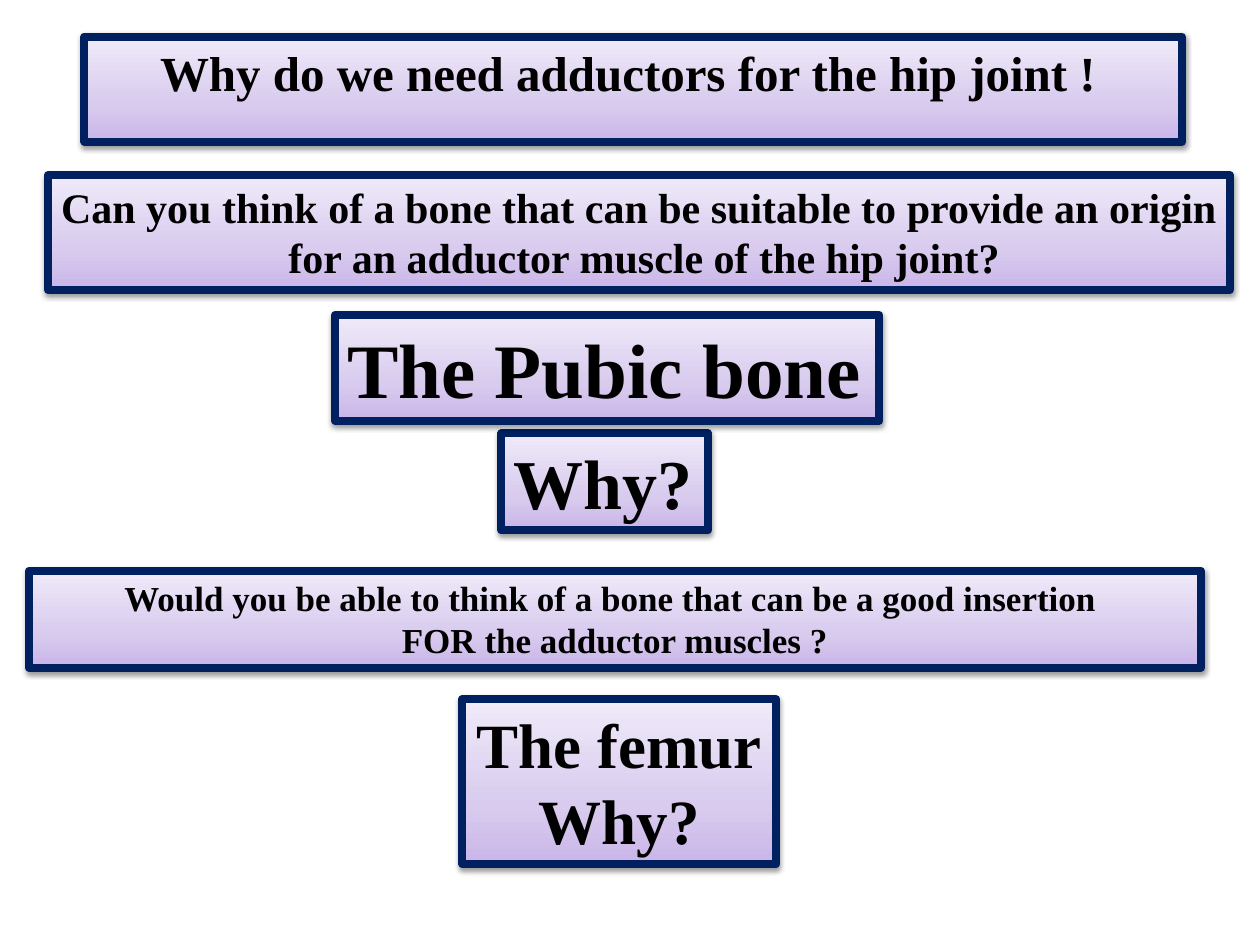
import copy

import pptx
import pptx.dml.color
import pptx.enum.text
import pptx.oxml
import pptx.oxml.ns
import pptx.util

Inches = pptx.util.Inches
Pt = pptx.util.Pt
qn = pptx.oxml.ns.qn
ALIGN = pptx.enum.text.PP_ALIGN

COLORS = {"text": "000000", "border": "002060", "shadow": "000000",
          "dark": "C9B5E8", "middle": "D8CBEE", "light": "F0EAF9"}
GRADIENT = [("dark", 0), ("middle", 0.35), ("light", 1)]
SHADOW = (
    f'<a:effectLst {pptx.oxml.ns.nsdecls("a")}>'
    f'<a:outerShdw blurRad="{Pt(3.1)}" dist="{Pt(1.6)}" dir="5400000" rotWithShape="0">'
    f'<a:srgbClr val="{COLORS["shadow"]}"><a:alpha val="38000"/></a:srgbClr>'
    '</a:outerShdw></a:effectLst>')


def rgb(name):
    return pptx.dml.color.RGBColor.from_string(COLORS[name])


class QuestionSlide:
    """Lavender boxes with a navy border on one slide."""

    font = "Times New Roman"
    border_width = Pt(4.5)

    def __init__(self, prs):
        self.s = prs.slides.add_slide(prs.slide_layouts[5])

    def title(self, text, box, size):
        sp = self.s.shapes.title
        sp.left, sp.top, sp.width, sp.height = [Inches(v) for v in box]
        self.decorate(sp)
        self.set_text(sp, text, size, ALIGN.LEFT, wrap=True)

    def box(self, text, box, size, align=ALIGN.CENTER, wrap=False):
        sp = self.s.shapes.add_textbox(*[Inches(v) for v in box])
        self.decorate(sp)
        self.set_text(sp, text, size, align, wrap)

    def decorate(self, sp):
        # Three-stop gradient, dark at the bottom
        sp.fill.gradient()
        sp.fill.gradient_angle = 90
        stops = sp.element.spPr.find(".//" + qn("a:gsLst"))
        stops.append(copy.deepcopy(stops[-1]))
        for stop, (name, position) in zip(sp.fill.gradient_stops, GRADIENT):
            stop.color.rgb = rgb(name)
            stop.position = position
        # Border and soft shadow
        sp.line.color.rgb = rgb("border")
        sp.line.width = self.border_width
        sp.element.spPr.append(pptx.oxml.parse_xml(SHADOW))

    def set_text(self, sp, text, size, align, wrap):
        tf = sp.text_frame
        tf.text = text
        tf.word_wrap = wrap
        tf.auto_size = pptx.enum.text.MSO_AUTO_SIZE.SHAPE_TO_FIT_TEXT
        tf.vertical_anchor = pptx.enum.text.MSO_ANCHOR.TOP
        for p in tf.paragraphs:
            p.alignment = align
            for r in p.runs:
                r.font.name = self.font
                r.font.size = Pt(size)
                r.font.bold = True
                r.font.color.rgb = rgb("text")


def main():
    prs = pptx.Presentation()
    prs.slide_width, prs.slide_height = Inches(10), Inches(7.5)
    slide = QuestionSlide(prs)

    # Main question
    slide.title("\tWhy do we need adductors for the hip joint !",
                (0.67, 0.29, 8.71, 0.57), 28)

    # Origin of the muscles
    slide.box("Can you think of a bone that can be suitable to provide an origin\n"
              " for an adductor muscle of the hip joint?", (0.38, 1.39, 9.38, 0.91), 24)
    slide.box("Why?", (3.98, 3.44, 1.64, 0.77), 40, ALIGN.LEFT)
    slide.box("The Pubic bone", (2.66, 2.5, 4.32, 0.84), 44, ALIGN.LEFT)

    # Insertion of the muscles
    slide.box("Would you be able to think of a bone that can be a good insertion \n"
              "FOR the adductor muscles ?", (0.23, 4.53, 9.3, 0.77), 20, wrap=True)
    slide.box("The femur\nWhy?", (3.67, 5.55, 2.49, 1.31), 36)

    prs.save("out.pptx")


if __name__ == "__main__":
    main()
